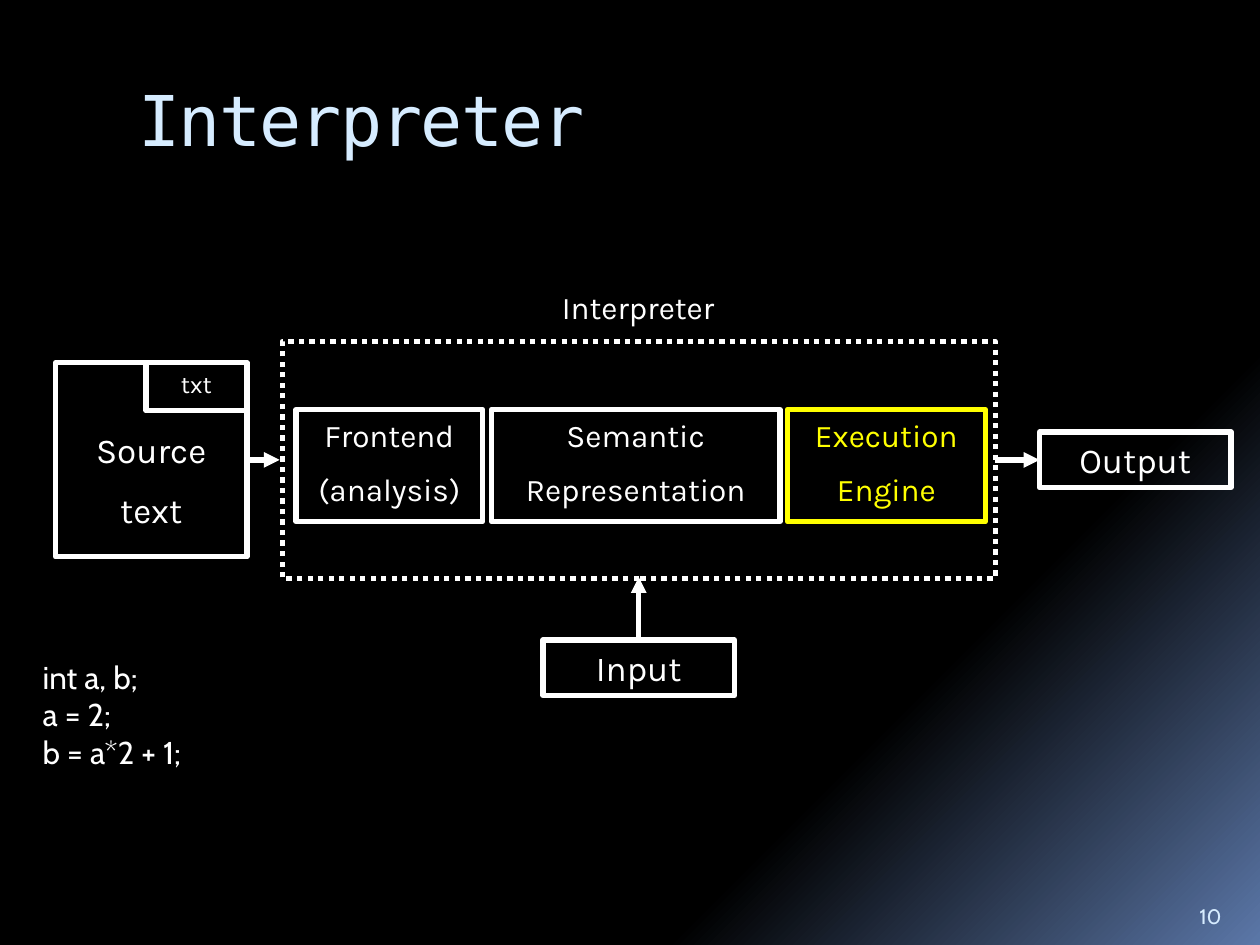
from dataclasses import dataclass

from pptx import Presentation
from pptx import util as u
from pptx.dml.color import RGBColor
from pptx.enum import dml, shapes, text
from pptx.oxml.ns import qn
from lxml import etree

BLACK = RGBColor(0x00, 0x00, 0x00)
WHITE = RGBColor(0xFF, 0xFF, 0xFF)
YELLOW = RGBColor(0xFF, 0xFF, 0x00)
PALE_BLUE = RGBColor(0xD6, 0xEC, 0xFF)
STEEL_BLUE = RGBColor(0x5B, 0x77, 0xA8)

LINE_WIDTH = u.Pt(3)
FLOW_Y = 3.65
STAGE_TOP, STAGE_HEIGHT = 3.25, 0.89


@dataclass
class Box:
    left: float
    top: float
    width: float
    height: float
    words: str = ""
    size: int = 18
    color: RGBColor = WHITE
    dotted: bool = False
    top_inset: float = 0.05


@dataclass
class Label:
    left: float
    top: float
    width: float
    height: float
    words: str
    size: int
    font: str
    color: RGBColor = WHITE
    centered: bool = False
    anchor: text.MSO_ANCHOR = text.MSO_ANCHOR.TOP
    tracking: int = 0  # hundredths of a point


@dataclass
class Arrow:
    start: tuple[float, float]
    end: tuple[float, float]


LABELS = [
    Label(1, 0.56, 8.5, 1, "Interpreter", 40, "DejaVu Sans Mono", PALE_BLUE, tracking=-100),
    Label(3.91, 2.24, 2.31, 0.4, "Interpreter", 18, "Karla", centered=True),
    Label(0.24, 5.17, 1.55, 1.01, "int a, b;\na = 2;\nb = a*2 + 1;", 18, "Cabin"),
    Label(9.42, 7.02, 0.5, 0.4, "10", 12, "Cabin", PALE_BLUE, anchor=text.MSO_ANCHOR.BOTTOM),
]

BOXES = [
    # Source file with its type tag
    Box(0.44, 2.88, 1.52, 1.54, "Source\ntext", 20, top_inset=0.52),
    Box(1.16, 2.88, 0.8, 0.38, "txt", 14),
    # Interpreter frame and its stages
    Box(2.24, 2.71, 5.66, 1.88, dotted=True),
    Box(3.9, STAGE_TOP, 2.29, STAGE_HEIGHT, "Semantic\nRepresentation"),
    Box(2.35, STAGE_TOP, 1.48, STAGE_HEIGHT, "Frontend\n(analysis)"),
    Box(6.25, STAGE_TOP, 1.57, STAGE_HEIGHT, "Execution\nEngine", color=YELLOW),
    # Data going in and out
    Box(4.31, 5.08, 1.52, 0.44, "Input", 20),
    Box(8.25, 3.43, 1.52, 0.44, "Output", 20),
]

ARROWS = [
    Arrow((1.98, FLOW_Y), (2.22, FLOW_Y)),
    Arrow((7.9, FLOW_Y), (8.25, FLOW_Y)),
    Arrow((5.07, 5.08), (5.07, 4.58)),
]


def write(frame, words: str, size: int, font: str, color: RGBColor,
          centered: bool, tracking: int = 0) -> None:
    frame.word_wrap = True
    frame.text = words
    for para in frame.paragraphs:
        para.alignment = text.PP_ALIGN.CENTER if centered else text.PP_ALIGN.LEFT
        if centered:
            para.space_before = u.Pt(round(size * 0.53, 1))
        for span in para.runs:
            span.font.size = u.Pt(size)
            span.font.name = font
            span.font.color.rgb = color
            if tracking:
                span.font._element.set("spc", str(tracking))


def draw_label(page, label: Label) -> None:
    area = [u.Inches(n) for n in (label.left, label.top, label.width, label.height)]
    frame = page.shapes.add_textbox(*area).text_frame
    write(frame, label.words, label.size, label.font, label.color,
          label.centered, label.tracking)
    frame.vertical_anchor = label.anchor


def draw_box(page, box: Box) -> None:
    area = [u.Inches(n) for n in (box.left, box.top, box.width, box.height)]
    shape = page.shapes.add_shape(shapes.MSO_SHAPE.RECTANGLE, *area)
    shape.shadow.inherit = False
    shape.fill.background()
    shape.line.color.rgb = box.color
    shape.line.width = LINE_WIDTH
    if box.dotted:
        shape.line.dash_style = dml.MSO_LINE.ROUND_DOT
    if box.words:
        frame = shape.text_frame
        write(frame, box.words, box.size, "Karla", box.color, centered=True)
        frame.vertical_anchor = text.MSO_ANCHOR.TOP
        frame.margin_top = u.Inches(box.top_inset)


def draw_arrow(page, arrow: Arrow) -> None:
    points = [u.Inches(n) for n in arrow.start + arrow.end]
    line = page.shapes.add_connector(shapes.MSO_CONNECTOR.STRAIGHT, *points)
    line.line.color.rgb = WHITE
    line.line.width = LINE_WIDTH
    etree.SubElement(line.line._get_or_add_ln(), qn("a:tailEnd"), type="triangle")
    etree.SubElement(line._element.spPr, qn("a:effectLst"))


def paint_background(page) -> None:
    fill = page.background.fill
    fill.gradient()
    fill.gradient_angle = 315  # counter-clockwise: towards the bottom right
    for stop, (position, color) in zip(fill.gradient_stops, [(0.73, BLACK), (1, STEEL_BLUE)]):
        stop.position = position
        stop.color.rgb = color


def main() -> None:
    deck = Presentation()
    deck.slide_width, deck.slide_height = u.Inches(10), u.Inches(7.5)
    page = deck.slides.add_slide(deck.slide_layouts[6])
    paint_background(page)
    for label in LABELS:
        draw_label(page, label)
    for box in BOXES:
        draw_box(page, box)
    for arrow in ARROWS:
        draw_arrow(page, arrow)
    deck.save("out.pptx")


if __name__ == "__main__":
    main()
